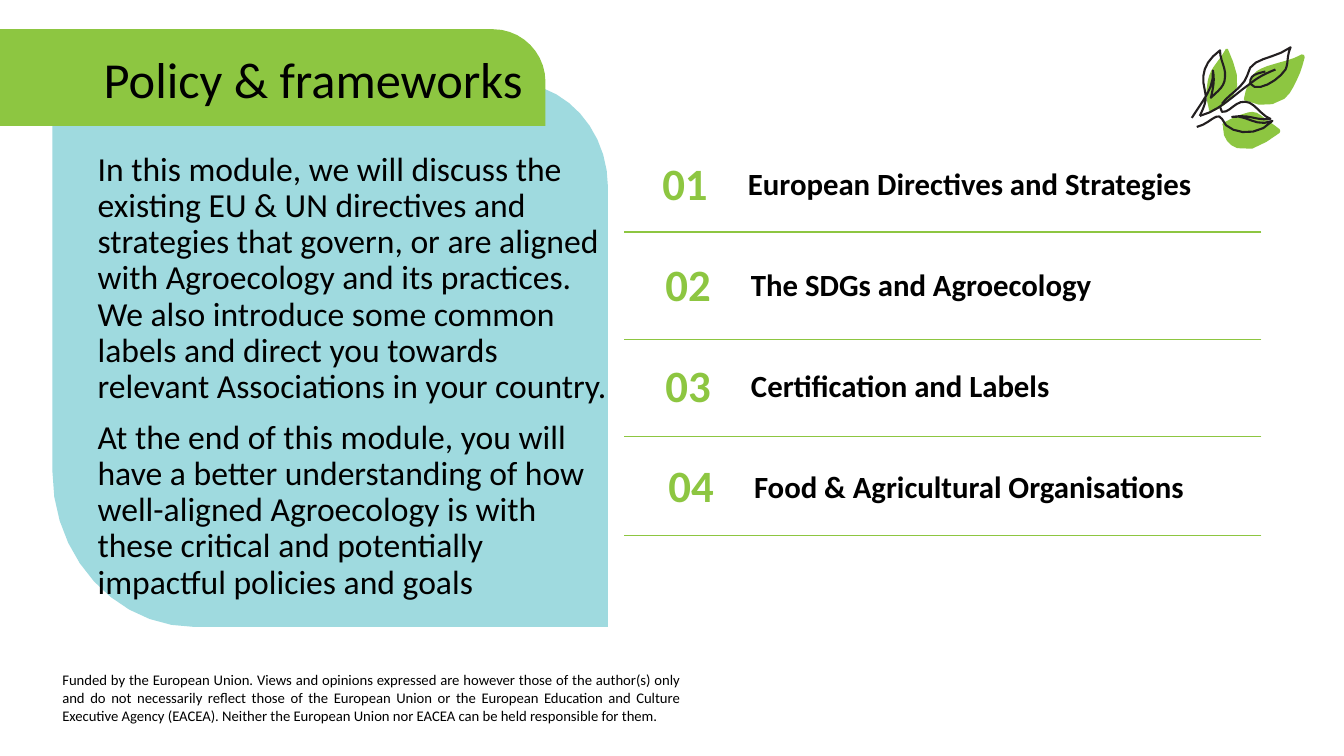
from dataclasses import dataclass

from lxml import etree
from pptx import Presentation
from pptx.dml.color import RGBColor
from pptx.enum.shapes import MSO_CONNECTOR
from pptx.enum.text import MSO_ANCHOR, PP_ALIGN
from pptx.oxml.ns import qn
from pptx.util import Inches, Pt

STRAIGHT = MSO_CONNECTOR.STRAIGHT
TOP, MIDDLE = MSO_ANCHOR.TOP, MSO_ANCHOR.MIDDLE
LEFT, CENTER, JUSTIFY = PP_ALIGN.LEFT, PP_ALIGN.CENTER, PP_ALIGN.JUSTIFY


@dataclass(frozen=True)
class Theme:
    font: str = "Calibri"
    green: str = "8DC641"
    teal: str = "9FDADF"
    text: str = "000000"
    ink: str = "231F20"
    title: float = 36
    number: float = 32
    body: float = 24
    topic: float = 22
    footer: float = 10.5


def cubic(p0, p1, p2, p3, steps):
    for i in range(1, steps + 1):
        t = i / steps
        u = 1 - t
        yield tuple(
            u**3 * a + 3 * u * u * t * b + 3 * u * t * t * c + t**3 * d
            for a, b, c, d in zip(p0, p1, p2, p3)
        )


def trace(start, segments, steps):
    points = [start]
    for seg in segments:
        if len(seg) == 2:
            points.append(seg)
        else:
            points.extend(cubic(points[-1], seg[:2], seg[2:4], seg[4:], steps))
    return [(Inches(x), Inches(y)) for x, y in points]


class Deck:
    def __init__(self, theme):
        self.theme = theme
        self.prs = Presentation()
        self.prs.slide_width = Inches(13.33)
        self.prs.slide_height = Inches(7.5)
        self.slide = self.prs.slides.add_slide(self.prs.slide_layouts[6])

    def outline(self, strokes, fill=None, line=None, steps=10, group=None):
        shapes = group.shapes if group else self.slide.shapes
        traced = [trace(start, segments, steps) for start, *segments in strokes]
        builder = shapes.build_freeform(*traced[0][0])
        for i, points in enumerate(traced):
            if i:
                builder.move_to(*points[0])
            builder.add_line_segments(points[1:], close=fill is not None)
        sp = builder.convert_to_shape()
        sp.shadow.inherit = False
        if fill:
            sp.fill.solid()
            sp.fill.fore_color.rgb = RGBColor.from_string(fill)
        else:
            sp.fill.background()
        if line:
            sp.line.color.rgb = RGBColor.from_string(line)
            sp.line.width = Pt(1.5)
        else:
            sp.line.fill.background()

    def divider(self, y):
        cxn = self.slide.shapes.add_connector(
            STRAIGHT, Inches(12.51), Inches(y), Inches(6.19), Inches(y)
        )
        cxn.line.color.rgb = RGBColor.from_string(self.theme.green)
        cxn.line.width = Pt(1)
        etree.SubElement(cxn._element.spPr, qn("a:effectLst"))

    def text(self, box, paragraphs, size, color=None, bold=False,
             align=LEFT, anchor=MIDDLE, spacing=0.9):
        sp = self.slide.shapes.add_textbox(*map(Inches, box))
        tf = sp.text_frame
        tf.word_wrap = True
        tf.vertical_anchor = anchor
        for i, content in enumerate(paragraphs):
            p = tf.add_paragraph() if i else tf.paragraphs[0]
            p.alignment = align
            p.line_spacing = spacing
            if i:
                p.space_before = Pt(10)
            r = p.add_run()
            r.text = content
            r.font.name = self.theme.font
            r.font.size = Pt(size)
            r.font.bold = bold
            r.font.color.rgb = RGBColor.from_string(color or self.theme.text)

    def save(self):
        self.prs.save("out.pptx")


TOPICS = [
    (6.41, "European Directives and Strategies"),
    (6.44, "The SDGs and Agroecology"),
    (6.44, "Certification and Labels"),
    (6.47, "Food & Agricultural Organisations"),
]

INTRO = [
    "In this module, we will discuss the existing EU & UN directives and "
    "strategies that govern, or are aligned with Agroecology and its practices. "
    "We also introduce some common labels and direct you towards relevant "
    "Associations in your country.",
    "At the end of this module, you will have a better understanding of how "
    "well-aligned Agroecology is with these critical and potentially impactful "
    "policies and goals",
]

FUNDING = (
    "Funded by the European Union. Views and opinions expressed are however "
    "those of the author(s) only and do not necessarily reflect those of the "
    "European Union or the European Education and Culture Executive Agency "
    "(EACEA). Neither the European Union nor EACEA can be held responsible for them."
)

INTRO_PANEL = [
    (6.03, 6.22), (1.93, 6.22), (1.15, 6.22, 0.52, 5.53, 0.52, 4.68),
    (0.52, 0.82), (5.08, 0.82), (5.61, 0.82, 6.03, 1.29, 6.03, 1.86),
]

TITLE_BAND = [
    (0, 0.29), (4.89, 0.29), (5.18, 0.29, 5.41, 0.53, 5.41, 0.81),
    (5.41, 1.25), (0, 1.25),
]

LEAVES = [
    [(12.05, 1.1), (12.15, 1.05, 12.25, 0.97, 12.27, 0.86),
     (12.29, 0.74, 12.23, 0.61, 12.18, 0.49), (12.18, 0.48, 12.15, 0.48, 12.15, 0.5),
     (12.12, 0.56, 12.08, 0.6, 12.04, 0.66), (12.01, 0.7, 11.99, 0.75, 11.98, 0.8),
     (11.96, 0.89, 11.96, 0.99, 11.99, 1.08), (11.98, 1.09, 12, 1.12, 12.05, 1.1)],
    [(12.74, 0.98), (12.8, 0.93, 12.83, 0.86, 12.86, 0.8),
     (12.9, 0.72, 12.92, 0.65, 12.94, 0.57), (12.94, 0.55, 12.93, 0.54, 12.91, 0.54),
     (12.84, 0.58, 12.77, 0.6, 12.69, 0.62), (12.63, 0.64, 12.57, 0.65, 12.51, 0.68),
     (12.46, 0.7, 12.42, 0.74, 12.4, 0.79), (12.37, 0.85, 12.35, 0.91, 12.34, 0.97),
     (12.33, 0.99, 12.34, 1, 12.36, 1), (12.48, 1.06, 12.63, 1.06, 12.74, 0.98)],
    [(12.69, 1.32), (12.7, 1.31, 12.7, 1.29, 12.69, 1.28),
     (12.64, 1.24, 12.59, 1.21, 12.54, 1.17), (12.5, 1.14, 12.47, 1.11, 12.42, 1.11),
     (12.38, 1.11, 12.34, 1.13, 12.3, 1.14), (12.26, 1.16, 12.22, 1.17, 12.15, 1.21),
     (12.12, 1.22, 12.12, 1.24, 12.13, 1.25), (12.13, 1.28, 12.14, 1.32, 12.14, 1.34),
     (12.16, 1.4, 12.21, 1.45, 12.27, 1.47), (12.42, 1.53, 12.57, 1.4, 12.69, 1.32)],
]

PEN_STROKES = [
    [(11.9, 1.15), (11.93, 1.08, 11.98, 1, 11.95, 0.9),
     (11.91, 0.74, 11.94, 0.62, 12.1, 0.5), (12.1, 0.6, 12.16, 0.67, 12.15, 0.76),
     (12.15, 0.86, 12.08, 0.9, 12.01, 0.97), (12.03, 0.88, 12.05, 0.8, 12.03, 0.7),
     (12.04, 0.88, 11.94, 0.98, 11.82, 1.17)],
    [(11.9, 1.15), (12.1, 1.1, 12.25, 0.93, 12.4, 0.83),
     (12.47, 0.77, 12.55, 0.73, 12.65, 0.69)],
    [(12.12, 1.03), (12.18, 0.94, 12.33, 0.87, 12.37, 0.75),
     (12.4, 0.56, 12.62, 0.6, 12.8, 0.47), (12.76, 0.56, 12.78, 0.63, 12.75, 0.69),
     (12.68, 0.8, 12.46, 0.93, 12.4, 0.83), (12.39, 0.74, 12.47, 0.73, 12.55, 0.71)],
    [(11.87, 1.26), (12, 1.23, 12.07, 1.1, 12.12, 1.18),
     (12.16, 1.32, 12.46, 1.38, 12.62, 1.2), (12.45, 1.27, 12.36, 1.13, 12.22, 1.16),
     (12.4, 1.13, 12.45, 1.2, 12.6, 1.18), (12.5, 1.14, 12.44, 1.01, 12.35, 1.01),
     (12.25, 1, 12.2, 1.12, 12.12, 1.11), (12.1, 1.06)],
]


def main():
    theme = Theme()
    deck = Deck(theme)
    deck.outline([INTRO_PANEL], fill=theme.teal)
    deck.outline([TITLE_BAND], fill=theme.green)
    for y in (2.3, 3.37, 4.33, 5.31):
        deck.divider(y)
    deck.text((0.52, 6.61, 6.33, 0.66), [FUNDING], theme.footer,
              align=JUSTIFY, anchor=TOP, spacing=1)
    deck.text((0.93, 0.42, 5.51, 0.79), ["Policy & frameworks"], theme.title)
    deck.text((0.87, 1.46, 5.3, 4.36), INTRO, theme.body, anchor=TOP)
    for i, (x, topic) in enumerate(TOPICS):
        y = 1.47 + i
        deck.text((x, y, 0.77, 0.75), [f"{i + 1:02}"], theme.number,
                  theme.green, bold=True, align=CENTER)
        deck.text((x + 0.91, y, 4.88, 0.75), [topic], theme.topic, bold=True)
    sprig = deck.slide.shapes.add_group_shape()
    for leaf in LEAVES:
        deck.outline([leaf], fill=theme.green, steps=3, group=sprig)
    deck.outline(PEN_STROKES, line=theme.ink, steps=6, group=sprig)
    deck.save()


if __name__ == "__main__":
    main()
